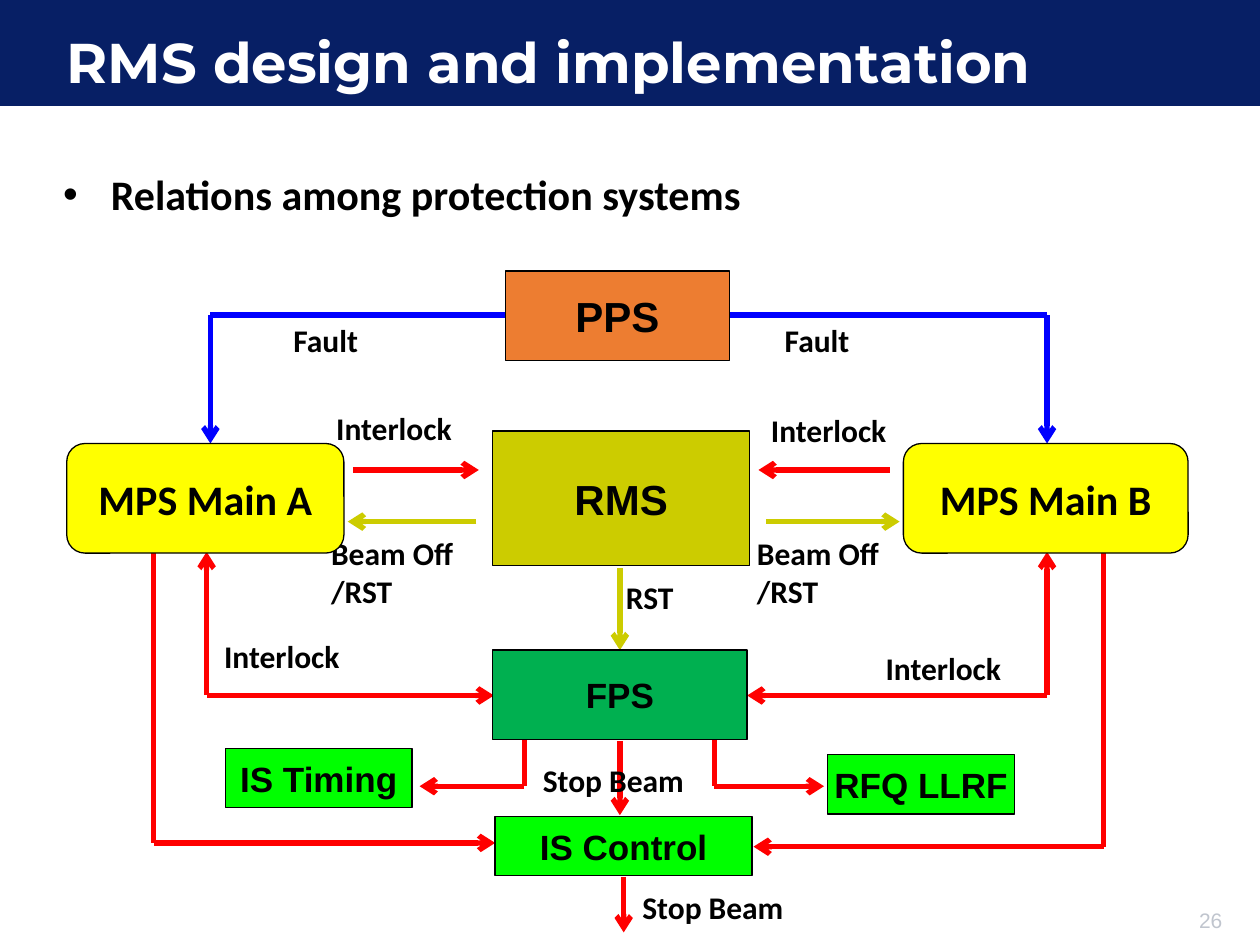
from itertools import pairwise

from lxml.etree import SubElement
from pptx import Presentation
from pptx.dml.color import RGBColor
from pptx.enum.shapes import MSO_CONNECTOR, MSO_SHAPE
from pptx.enum.text import MSO_ANCHOR, MSO_AUTO_SIZE, PP_ALIGN
from pptx.oxml.ns import qn
from pptx.util import Inches, Pt

NAVY = RGBColor(0x07, 0x1F, 0x65)
WHITE = RGBColor(0xFF, 0xFF, 0xFF)
BLACK = RGBColor(0, 0, 0)
GRAY = RGBColor(0xC0, 0xC5, 0xCE)
YELLOW = RGBColor(0xFF, 0xFF, 0)
GREEN = RGBColor(0, 0xB0, 0x50)
LIME = RGBColor(0, 0xFF, 0)
OLIVE = RGBColor(0xCC, 0xCC, 0)
ORANGE = RGBColor(0xED, 0x7D, 0x31)
RED = RGBColor(0xFF, 0, 0)
BLUE = RGBColor(0, 0, 0xFF)

prs = Presentation()
prs.slide_width, prs.slide_height = Inches(10), Inches(7.5)
slide = prs.slides.add_slide(prs.slide_layouts[1])
shapes = slide.shapes


def write(frame, text, size, font, color=BLACK, bold=True, align=PP_ALIGN.LEFT):
    frame.text = text
    for paragraph in frame.paragraphs:
        paragraph.alignment = align
        for run in paragraph.runs:
            run.font.size = Pt(size)
            run.font.name = font
            run.font.bold = bold
            run.font.color.rgb = color


def route(points, color, ends):
    """Draw straight segments through the points; ends names the arrowheads."""
    segments = list(pairwise(points))
    for i, (start, end) in enumerate(segments):
        segment = shapes.add_connector(
            MSO_CONNECTOR.STRAIGHT, *(Inches(v) for v in start + end))
        segment.line.color.rgb = color
        segment.line.width = Pt(3)
        if i == 0 and "start" in ends:
            SubElement(segment.line._get_or_add_ln(), qn("a:headEnd"), type="arrow")
        if i == len(segments) - 1 and "end" in ends:
            SubElement(segment.line._get_or_add_ln(), qn("a:tailEnd"), type="arrow")
        SubElement(segment._element.spPr, qn("a:effectLst"))


# Title band, behind the title
band = shapes.add_shape(MSO_SHAPE.RECTANGLE, 0, 0, prs.slide_width, Inches(0.84))
band.shadow.inherit = False
band.fill.solid()
band.fill.fore_color.rgb = NAVY
band.line.fill.background()
shapes._spTree.insert(2, band._element)

# Title
title = shapes.title
title.left, title.top = Inches(0.43), Inches(0.2)
title.width, title.height = Inches(8.6), Inches(0.64)
write(title.text_frame, "RMS design and implementation", 32, "Montserrat", WHITE)
title.text_frame.auto_size = MSO_AUTO_SIZE.NONE
title.text_frame.vertical_anchor = MSO_ANCHOR.MIDDLE
title.text_frame.paragraphs[0].line_spacing = 0.9

# Bullet
topic = slide.placeholders[1]
topic.left, topic.top = Inches(0.4), Inches(1.21)
topic.width, topic.height = Inches(5.95), Inches(0.68)
write(topic.text_frame, "Relations among protection systems", 24, "Calibri")
topic.text_frame.auto_size = MSO_AUTO_SIZE.NONE
topic_line = topic.text_frame.paragraphs[0]
topic_line.line_spacing = 1.2
topic_line.space_before = Pt(0)
topic_props = topic_line._p.get_or_add_pPr()
topic_props.set("marL", str(Inches(0.38)))
topic_props.set("indent", str(-Inches(0.38)))
bullet_color = SubElement(topic_props, qn("a:buClr"))
SubElement(bullet_color, qn("a:srgbClr"), val="000000")
SubElement(topic_props, qn("a:buFont"), typeface="Arial")
SubElement(topic_props, qn("a:buChar"), char="•")

# Slide number
page = shapes.add_textbox(Inches(9.39), Inches(7.15), Inches(0.41), Inches(0.3))
page.text_frame.word_wrap = False
write(page.text_frame, "26", 12, "Arial", GRAY, False, PP_ALIGN.RIGHT)

# Signal routes between the systems
routes = [
    # PPS faults
    ([(4.01, 2.5), (1.67, 2.5), (1.67, 3.52)], BLUE, "end"),
    ([(5.79, 2.5), (8.31, 2.5), (8.31, 3.52)], BLUE, "end"),
    # MPS and RMS
    ([(2.8, 3.73), (3.8, 3.73)], RED, "end"),
    ([(7.06, 3.73), (6.02, 3.73)], RED, "end"),
    ([(3.78, 4.14), (2.76, 4.14)], OLIVE, "end"),
    ([(6.08, 4.14), (7.14, 4.14)], OLIVE, "end"),
    # MPS and FPS
    ([(1.64, 4.38), (1.64, 5.52), (3.92, 5.52)], RED, "start end"),
    ([(8.31, 4.38), (8.31, 5.52), (5.93, 5.52)], RED, "start end"),
    # MPS to IS Control
    ([(1.22, 4.38), (1.22, 6.69), (3.93, 6.69)], RED, "end"),
    ([(8.76, 4.38), (8.76, 6.72), (5.98, 6.72)], RED, "end"),
    # RMS to FPS, then FPS to the beam controls
    ([(4.92, 4.51), (4.92, 5.16)], OLIVE, "end"),
    ([(4.92, 5.88), (4.92, 6.47)], RED, "end"),
    ([(4.16, 5.87), (4.16, 6.24), (3.33, 6.24)], RED, "end"),
    ([(5.67, 5.87), (5.67, 6.24), (6.54, 6.24)], RED, "end"),
    ([(4.95, 6.96), (4.95, 7.4)], RED, "end"),
]
for points, color, ends in routes:
    route(points, color, ends)

# Signal labels
labels = [
    ("Beam Off\n/RST", 2.53, 4.19, 1.6, 0.71),
    ("Beam Off\n/RST", 5.91, 4.19, 1.37, 0.71),
    ("Fault", 2.23, 2.5, 1.37, 0.4),
    ("Fault", 6.13, 2.5, 1.37, 0.4),
    ("Interlock", 2.57, 3.2, 1.36, 0.4),
    ("Interlock", 6.02, 3.21, 1.26, 0.4),
    ("Interlock", 1.68, 5.01, 1.36, 0.4),
    ("Interlock", 6.93, 5.1, 1.36, 0.4),
    ("RST", 4.87, 4.54, 0.84, 0.4),
    ("Stop Beam", 4.21, 5.99, 1.53, 0.4),
    ("Stop Beam", 5, 7, 1.53, 0.4),
]
for text, *place in labels:
    label = shapes.add_textbox(*(Inches(v) for v in place))
    label.text_frame.word_wrap = True
    write(label.text_frame, text, 18, "Calibri")

# Protection systems
RECT, ROUNDED = MSO_SHAPE.RECTANGLE, MSO_SHAPE.ROUNDED_RECTANGLE
systems = [
    ("PPS", RECT, ORANGE, 24, "Arial", 4.01, 2.15, 1.78, 0.71),
    ("MPS Main A", ROUNDED, YELLOW, 24, "Calibri", 0.53, 3.52, 2.2, 0.87),
    ("MPS Main B", ROUNDED, YELLOW, 24, "Calibri", 7.17, 3.52, 2.26, 0.87),
    ("RMS", RECT, OLIVE, 24, "Arial", 3.91, 3.42, 2.04, 1.07),
    ("FPS", RECT, GREEN, 20, "Arial", 3.91, 5.16, 2.02, 0.71),
    ("IS Timing", RECT, LIME, 20, "Arial", 1.79, 5.94, 1.48, 0.47),
    ("RFQ LLRF", RECT, LIME, 20, "Arial", 6.57, 5.99, 1.48, 0.47),
    ("IS Control", RECT, LIME, 20, "Arial", 3.93, 6.48, 2.04, 0.47),
]
for name, outline, color, size, font, *place in systems:
    system = shapes.add_shape(outline, *(Inches(v) for v in place))
    system.shadow.inherit = False
    system.fill.solid()
    system.fill.fore_color.rgb = color
    system.line.color.rgb = BLACK
    system.line.width = Pt(0.75)
    system.text_frame.word_wrap = False
    system.text_frame.vertical_anchor = MSO_ANCHOR.MIDDLE
    write(system.text_frame, name, size, font, align=PP_ALIGN.CENTER)

prs.save("out.pptx")
